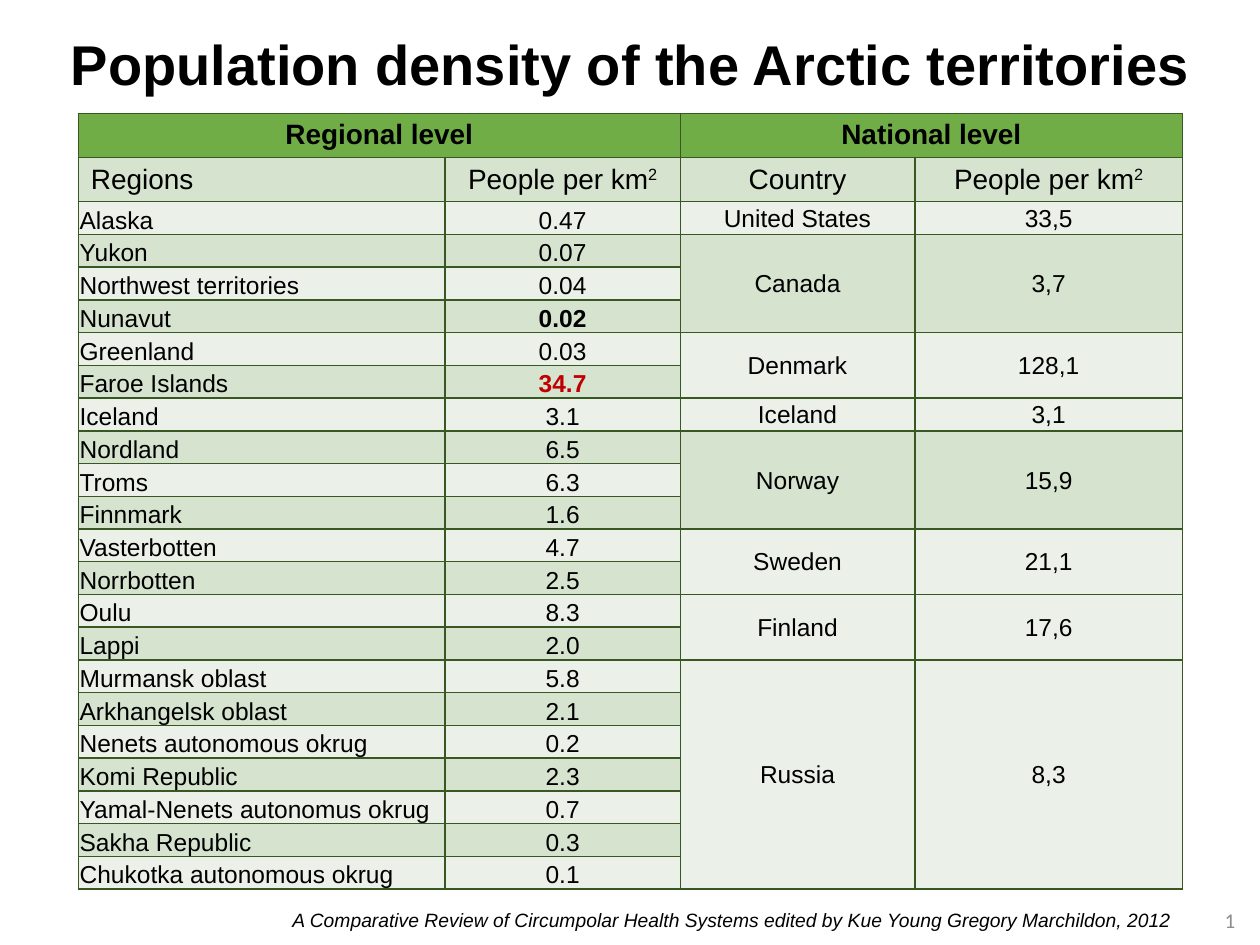
from dataclasses import dataclass

from lxml.etree import SubElement
from pptx import Presentation
from pptx.dml.color import RGBColor as Rgb
from pptx.enum.text import MSO_ANCHOR as Anchor, MSO_AUTO_SIZE as AutoSize, PP_ALIGN as Align
from pptx.oxml.ns import qn
from pptx.util import Pt


@dataclass(frozen=True)
class Theme:
    header: str = "70AD47"
    band_dark: str = "D5E3CF"
    band_light: str = "EBF1E9"
    border: str = "385723"
    ink: str = "000000"
    highlight: str = "C00000"
    muted: str = "8C8C8C"
    font: str = "Arial"
    number_font: str = "Calibri"
    title_size: int = 32
    header_size: int = 16
    body_size: int = 14
    number_size: int = 12
    source_size: int = 11


THEME = Theme()
COLUMN_WIDTHS = (209.5, 134.5, 134, 153)
HEADER_HEIGHT = 25.2
BODY_HEIGHT = 18.72
HEADER_ROWS = 2

# (country, national density, [(region, regional density), ...])
COUNTRIES = [
    ("United States", "33,5", [("Alaska", "0.47")]),
    ("Canada", "3,7", [("Yukon", "0.07"), ("Northwest territories", "0.04"),
                       ("Nunavut", "0.02")]),
    ("Denmark", "128,1", [("Greenland", "0.03"), ("Faroe Islands", "34.7")]),
    ("Iceland", "3,1", [("Iceland", "3.1")]),
    ("Norway", "15,9", [("Nordland", "6.5"), ("Troms", "6.3"), ("Finnmark", "1.6")]),
    ("Sweden", "21,1", [("Vasterbotten", "4.7"), ("Norrbotten", "2.5")]),
    ("Finland", "17,6", [("Oulu", "8.3"), ("Lappi", "2.0")]),
    ("Russia", "8,3", [("Murmansk oblast", "5.8"), ("Arkhangelsk oblast", "2.1"),
                       ("Nenets autonomous okrug", "0.2"), ("Komi Republic", "2.3"),
                       ("Yamal-Nenets autonomus okrug", "0.7"),
                       ("Sakha Republic", "0.3"), ("Chukotka autonomous okrug", "0.1")]),
]
EMPHASIS = {
    "Nunavut": {"bold": True},
    "Faroe Islands": {"bold": True, "color": THEME.highlight},
}


def write(frame, text, size=THEME.body_size, color=THEME.ink, font=THEME.font,
          bold=False, italic=False, align=Align.LEFT, superscript=False):
    """Append a formatted run to the frame's first paragraph."""
    paragraph = frame.paragraphs[0]
    paragraph.alignment = align
    run = paragraph.add_run()
    run.text = text
    run.font.size = Pt(size)
    run.font.name = font
    run.font.bold = bold
    run.font.italic = italic
    run.font.color.rgb = Rgb.from_string(color)
    if superscript:
        run.font._element.set("baseline", "30000")
    return run


def add_title(slide, text):
    title = slide.shapes.title
    title.left, title.top, title.width, title.height = Pt(21.6), Pt(12.2), Pt(677.5), Pt(52.6)
    frame = title.text_frame
    frame.auto_size = AutoSize.NONE
    frame.vertical_anchor = Anchor.MIDDLE
    frame.paragraphs[0].line_spacing = 0.9
    write(frame, text, size=THEME.title_size, bold=True, align=Align.CENTER)


def add_text_area(slide, left, top, width, height):
    area = slide.shapes.add_textbox(Pt(left), Pt(top), Pt(width), Pt(height))
    area.text_frame.word_wrap = True
    return area.text_frame


def add_slide_number(slide, number):
    frame = add_text_area(slide, 551, 511, 162, 29)
    frame.vertical_anchor = Anchor.MIDDLE
    run = write(frame, number, size=THEME.number_size, color=THEME.muted,
                font=THEME.number_font, align=Align.RIGHT)._r
    field = SubElement(run.getparent(), qn("a:fld"), type="slidenum",
                       id="{B6F15528-21DE-4FAA-801E-634DDDAF4B2B}")
    field.extend(list(run))
    run.getparent().remove(run)


def style_cell(cell, fill):
    properties = cell._tc.get_or_add_tcPr()
    for side in ("lnL", "lnR", "lnT", "lnB"):
        line = SubElement(properties, qn(f"a:{side}"), w=str(Pt(1)))
        SubElement(SubElement(line, qn("a:solidFill")), qn("a:srgbClr"), val=THEME.border)
    cell.fill.solid()
    cell.fill.fore_color.rgb = Rgb.from_string(fill)


def fill_body_cell(cell, text, anchor, **text_format):
    cell.margin_left = cell.margin_right = cell.margin_top = Pt(0.72)
    cell.margin_bottom = Pt(0)
    cell.vertical_anchor = anchor
    write(cell.text_frame, text, **text_format)


def fill_header(table):
    for column, level in ((0, "Regional level"), (2, "National level")):
        cell = table.cell(0, column)
        cell.merge(table.cell(0, column + 1))
        write(cell.text_frame, level, size=THEME.header_size, bold=True, align=Align.CENTER)
    headings = (("Regions", Align.LEFT), ("People per km", Align.CENTER),
                ("Country", Align.CENTER), ("People per km", Align.CENTER))
    for column, (heading, align) in enumerate(headings):
        frame = table.cell(1, column).text_frame
        write(frame, heading, size=THEME.header_size, align=align)
        if heading.endswith("km"):
            write(frame, "2", size=THEME.header_size, align=align, superscript=True)


def fill_country(table, first_row, country, density, regions):
    last_row = first_row + len(regions) - 1
    for column, text in ((2, country), (3, density)):
        cell = table.cell(first_row, column)
        if last_row > first_row:
            cell.merge(table.cell(last_row, column))
        fill_body_cell(cell, text, Anchor.MIDDLE, align=Align.CENTER)
    for row, (region, regional_density) in enumerate(regions, first_row):
        fill_body_cell(table.cell(row, 0), region, Anchor.BOTTOM)
        fill_body_cell(table.cell(row, 1), regional_density, Anchor.BOTTOM,
                       align=Align.CENTER, **EMPHASIS.get(region, {}))


def add_density_table(slide):
    body_rows = sum(len(regions) for _, _, regions in COUNTRIES)
    height = HEADER_ROWS * HEADER_HEIGHT + body_rows * BODY_HEIGHT
    table = slide.shapes.add_table(HEADER_ROWS + body_rows, len(COLUMN_WIDTHS), Pt(44.8),
                                   Pt(64.8), Pt(sum(COLUMN_WIDTHS)), Pt(height)).table
    for column, width in zip(table.columns, COLUMN_WIDTHS):
        column.width = Pt(width)
    for index, row in enumerate(table.rows):
        row.height = Pt(HEADER_HEIGHT if index < HEADER_ROWS else BODY_HEIGHT)
        band = THEME.band_dark if index % 2 else THEME.band_light
        for cell in row.cells:
            style_cell(cell, band if index else THEME.header)
    fill_header(table)
    first_row = HEADER_ROWS
    for country, density, regions in COUNTRIES:
        fill_country(table, first_row, country, density, regions)
        first_row += len(regions)


def main():
    deck = Presentation()
    deck.slide_width, deck.slide_height = Pt(720), Pt(540)
    slide = deck.slides.add_slide(deck.slide_layouts[5])
    add_title(slide, "Population density of the Arctic territories")
    add_density_table(slide)
    source = add_text_area(slide, 160, 515.5, 526, 34)
    write(source, "A Comparative Review of Circumpolar Health Systems edited by "
          "Kue Young Gregory Marchildon, 2012", size=THEME.source_size, italic=True)
    add_slide_number(slide, "6")
    deck.save("out.pptx")


if __name__ == "__main__":
    main()
